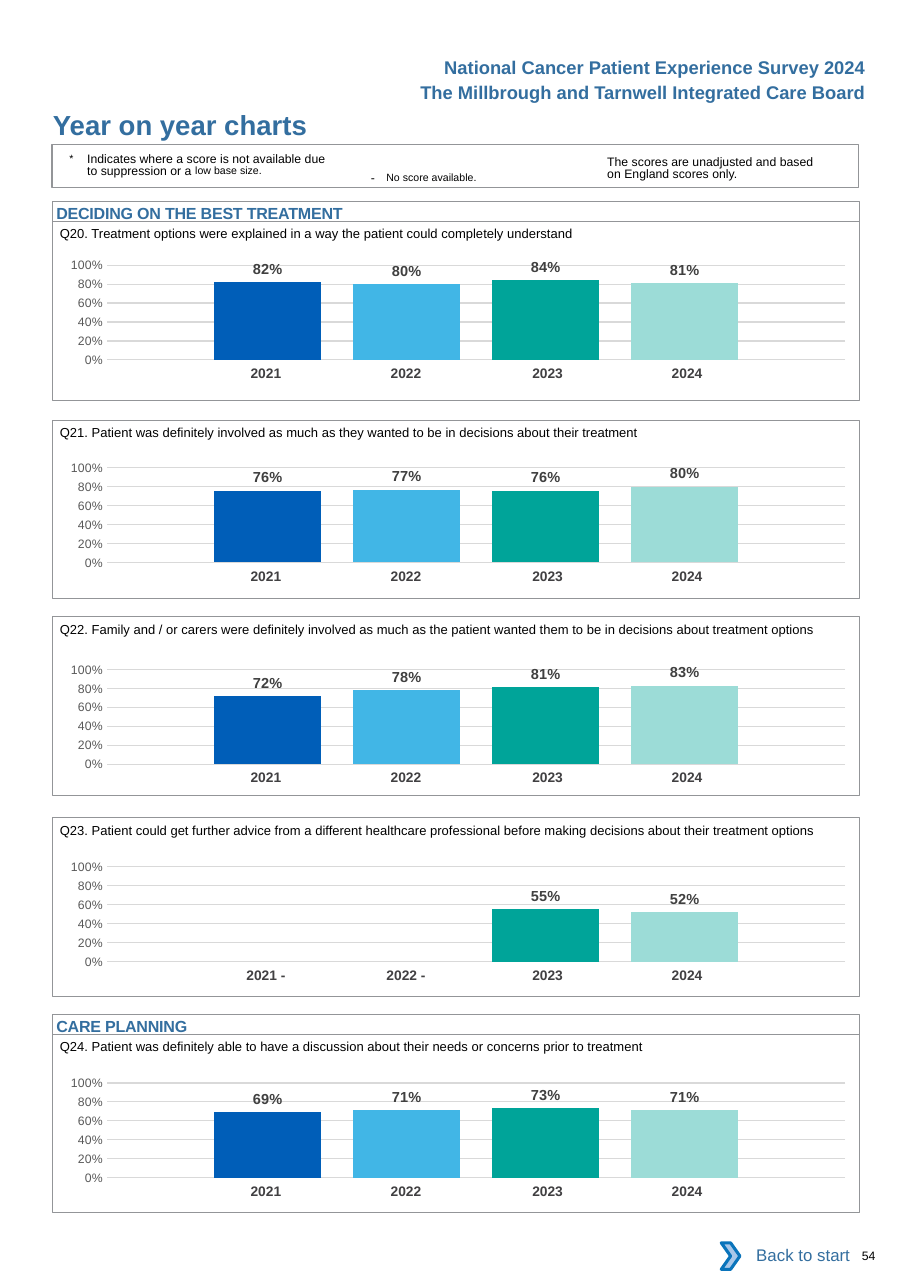
from dataclasses import dataclass

from lxml import etree
from pptx import Presentation
from pptx.chart.data import CategoryChartData
from pptx.dml.color import RGBColor
from pptx.enum.chart import XL_CHART_TYPE, XL_LABEL_POSITION, XL_TICK_MARK
from pptx.enum.shapes import MSO_SHAPE
from pptx.enum.text import MSO_ANCHOR, PP_ALIGN
from pptx.oxml import parse_xml
from pptx.oxml.ns import nsdecls, qn
from pptx.util import Cm, Pt


@dataclass(frozen=True)
class Theme:
    font: str = "Arial"
    chart_font: str = "Calibri"
    heading: str = "336E9F"
    body: str = "000000"
    frame: str = "939598"
    year: str = "414042"
    axis: str = "595959"
    grid: str = "D9D9D9"
    value: str = "404040"
    chevron: str = "A8C7E9"
    chevron_line: str = "0A74BB"
    bars: tuple = ("005EB8", "41B6E6", "00A499", "9CDCD7")
    title_pt: float = 18
    header_pt: float = 12
    link_pt: float = 11
    section_pt: float = 10.5
    value_pt: float = 9.5
    year_pt: float = 9
    question_pt: float = 8.5
    small_pt: float = 8
    raised_pt: float = 12


THEME = Theme()
YEARS = ("2021", "2022", "2023", "2024")
YEAR_WIDTHS = (3.23, 3.23, 3.4, 3.23)
YEAR_RIGHT_MARGINS = (0, 0, 0.1, 0.3)
NO_TABLE_STYLE = "{2D5ABB26-0587-4C30-8999-92F81FD0307C}"
PANEL_LEFT, PANEL_WIDTH, PANEL_HEIGHT = 1.22, 18.59, 4.11
SECTION_HEIGHT = 0.46

# section, frame top, chart offset from frame top, question, scores
PANELS = (
    ("DECIDING ON THE BEST TREATMENT", 5.11, 0.53,
     "Q20. Treatment options were explained in a way the patient could completely understand",
     (0.82, 0.80, 0.84, 0.81)),
    (None, 9.68, 0.63,
     "Q21. Patient was definitely involved as much as they wanted to be in decisions about their treatment",
     (0.76, 0.77, 0.76, 0.80)),
    (None, 14.22, 0.74,
     "Q22. Family and / or carers were definitely involved as much as the patient wanted them to be in decisions about treatment options",
     (0.72, 0.78, 0.81, 0.83)),
    (None, 18.85, 0.66,
     "Q23. Patient could get further advice from a different healthcare professional before making decisions about their treatment options",
     (None, None, 0.55, 0.52)),
    ("CARE PLANNING", 23.85, 0.64,
     "Q24. Patient was definitely able to have a discussion about their needs or concerns prior to treatment",
     (0.69, 0.71, 0.73, 0.71)),
)


def rgb(value):
    return RGBColor.from_string(value)


def style_font(font, size, color, bold=False, name=THEME.font):
    font.size, font.bold, font.name = Pt(size), bold, name
    font.color.rgb = rgb(color)


def write(frame, text, size, color, bold=False, align=PP_ALIGN.LEFT, margins=(0, 0, 0, 0)):
    """Fill a text frame with one paragraph; margins are left, top, right, bottom."""
    frame.word_wrap = True
    frame.margin_left, frame.margin_top, frame.margin_right, frame.margin_bottom = map(Cm, margins)
    paragraph = frame.paragraphs[0]
    paragraph.text, paragraph.alignment = text, align
    for run in paragraph.runs:
        style_font(run.font, size, color, bold)
    return paragraph


def add_text(slide, box, text, size, color=THEME.body, **options):
    label = slide.shapes.add_textbox(*map(Cm, box))
    return write(label.text_frame, text, size, color, **options)


def add_note(slide, box, pieces):
    """Add a legend note from (text, size, baseline, letter spacing) pieces."""
    paragraph = add_text(slide, box, "", THEME.small_pt)
    for text, size, baseline, spacing in pieces:
        run = paragraph.add_run()
        run.text = text
        style_font(run.font, size, THEME.body)
        properties = run._r.get_or_add_rPr()
        properties.set("baseline", str(baseline))
        properties.set("spc", str(spacing))
    return paragraph


def add_frame(slide, box, kind=MSO_SHAPE.RECTANGLE, fill=None, line=THEME.frame, width=0.5):
    frame = slide.shapes.add_shape(kind, *map(Cm, box))
    frame.shadow.inherit = False
    if fill:
        frame.fill.solid()
        frame.fill.fore_color.rgb = rgb(fill)
    else:
        frame.fill.background()
    frame.line.color.rgb = rgb(line)
    frame.line.width = Pt(width)
    return frame


def add_header(slide, left, top, width):
    right_box = (left, top, width, 0.76)
    add_text(slide, right_box, "National Cancer Patient Experience Survey 2024",
             THEME.header_pt, THEME.heading, bold=True, align=PP_ALIGN.RIGHT)
    add_text(slide, (left, top + 0.57, width, 0.76), "The Millbrough and Tarnwell Integrated Care Board",
             THEME.header_pt, THEME.heading, bold=True, align=PP_ALIGN.RIGHT)
    add_text(slide, (left, top + 1.2, width, 0.76), "Year on year charts",
             THEME.title_pt, THEME.heading, bold=True)


def add_legend(slide, left, top, width, height):
    small, raised = THEME.small_pt, THEME.raised_pt
    add_frame(slide, (left, top, width, height), width=0.75)
    suppressed = add_note(slide, (left + 0.4, top + 0.23, 6.05, 0.7), (
        ("*\t", raised, 3000, 0),
        ("Indicates where a score is not available due to suppression or a ", small, 0, 0),
        ("low base size.", raised, 7000, 0)))
    indent = suppressed._p.get_or_add_pPr()
    indent.set("marL", str(Cm(0.41)))
    indent.set("indent", str(Cm(-0.41)))
    add_note(slide, (left + 7.35, top + 0.45, 4.4, 0.5), (
        ("- ", small, 0, 260), ("No score available.", raised, 3000, 0)))
    unadjusted = add_note(slide, (left + 12.8, top + 0.28, 4.95, 0.7), (
        ("The scores are unadjusted and based on England scores only.", small, 0, 0),))
    for paragraph in (suppressed, unadjusted):
        paragraph.line_spacing = Pt(8.1)


def add_score_chart(slide, box, scores):
    data = CategoryChartData(number_format="0%")
    data.categories = ["1"]
    for year, score in zip(YEARS, scores):
        data.add_series(year, [score])
    chart = slide.shapes.add_chart(XL_CHART_TYPE.COLUMN_CLUSTERED, *map(Cm, box), data).chart
    chart.has_legend = chart.has_title = False
    style_font(chart.font, 10, THEME.body, name=THEME.chart_font)
    chart.category_axis.visible = False

    axis = chart.value_axis
    axis.minimum_scale, axis.maximum_scale, axis.major_unit = 0, 1, 0.2
    axis.major_tick_mark = axis.minor_tick_mark = XL_TICK_MARK.NONE
    axis.format.line.fill.background()
    axis.major_gridlines.format.line.color.rgb = rgb(THEME.grid)
    axis.major_gridlines.format.line.width = Pt(0.75)
    axis.tick_labels.number_format, axis.tick_labels.number_format_is_linked = "0%", False
    style_font(axis.tick_labels.font, THEME.small_pt, THEME.axis)

    plot = chart.plots[0]
    plot.gap_width, plot.overlap, plot.vary_by_categories = 200, -30, False
    for series, color in zip(plot.series, THEME.bars):
        series.format.fill.solid()
        series.format.fill.fore_color.rgb = rgb(color)
        labels = series.data_labels
        labels.show_value, labels.position = True, XL_LABEL_POSITION.OUTSIDE_END
        labels.number_format, labels.number_format_is_linked = "0%", False
        style_font(labels.font, THEME.value_pt, THEME.value, bold=True)

    plot_area = chart._chartSpace.chart.plotArea
    for old_layout in plot_area.findall(qn("c:layout")):
        plot_area.remove(old_layout)
    layout = parse_xml(f"<c:layout {nsdecls('c')}><c:manualLayout/></c:layout>")
    settings = {"layoutTarget": "inner", "xMode": "edge", "yMode": "edge",
                "x": 0.08, "y": 0.145, "w": 0.915, "h": 0.666}
    for tag, value in settings.items():
        etree.SubElement(layout[0], qn(f"c:{tag}")).set("val", str(value))
    plot_area.insert(0, layout)


def add_year_row(slide, left, top, scores):
    box = (left, top, sum(YEAR_WIDTHS), 0.69)
    table = slide.shapes.add_table(1, len(YEARS), *map(Cm, box)).table
    table.first_row = table.horz_banding = False
    table._tbl.tblPr.find(qn("a:tableStyleId")).text = NO_TABLE_STYLE
    for column, (year, score) in enumerate(zip(YEARS, scores)):
        table.columns[column].width = Cm(YEAR_WIDTHS[column])
        cell = table.cell(0, column)
        cell.fill.background()
        write(cell.text_frame, year if score is not None else f"{year} -",
              THEME.year_pt, THEME.year, bold=True, align=PP_ALIGN.CENTER)
        cell.margin_left, cell.margin_right = Cm(0.25), Cm(YEAR_RIGHT_MARGINS[column])
        cell.margin_top = cell.margin_bottom = Cm(0.13)


def add_panel(slide, left, top, width, height, section, chart_offset, question, scores):
    chart_top = top + chart_offset
    add_score_chart(slide, (left - 0.23, chart_top, width, 3.28), scores)
    add_year_row(slide, left + 3.17, chart_top + 2.67, scores)
    add_frame(slide, (left, top, width, height))
    if section:
        bar = add_frame(slide, (left, top - SECTION_HEIGHT, width, SECTION_HEIGHT))
        bar.text_frame.vertical_anchor = MSO_ANCHOR.TOP
        heading = write(bar.text_frame, section, THEME.section_pt, THEME.heading,
                        bold=True, margins=(0.08, 0.03, 0, 0))
        heading.runs[0]._r.get_or_add_rPr().set("spc", "-10")
    add_text(slide, (left + 0.16, top - 0.15, width - 0.16, 0.61), question,
             THEME.question_pt, margins=(0, 0.25, 0, 0))


def add_footer(slide, left, top):
    add_text(slide, (left + 0.4, top + 0.1, 2.55, 0.5), "Back to start",
             THEME.link_pt, THEME.heading, align=PP_ALIGN.RIGHT)
    add_frame(slide, (left - 0.02, top + 0.05, 0.43, 0.61), MSO_SHAPE.CHEVRON,
              THEME.chevron, THEME.chevron_line, 2)
    add_text(slide, (left + 3.22, top + 0.18, 0.9, 0.33), "54", THEME.small_pt)


def main():
    deck = Presentation()
    deck.slide_width, deck.slide_height = Cm(20.98), Cm(29.69)
    slide = deck.slides.add_slide(deck.slide_layouts[6])
    add_header(slide, 1.22, 1.3, 18.74)
    add_legend(slide, 1.2, 3.33, PANEL_WIDTH, 0.99)
    for section, top, chart_offset, question, scores in PANELS:
        add_panel(slide, PANEL_LEFT, top, PANEL_WIDTH, PANEL_HEIGHT,
                  section, chart_offset, question, scores)
    add_footer(slide, 16.65, 28.6)
    deck.save("out.pptx")


if __name__ == "__main__":
    main()
